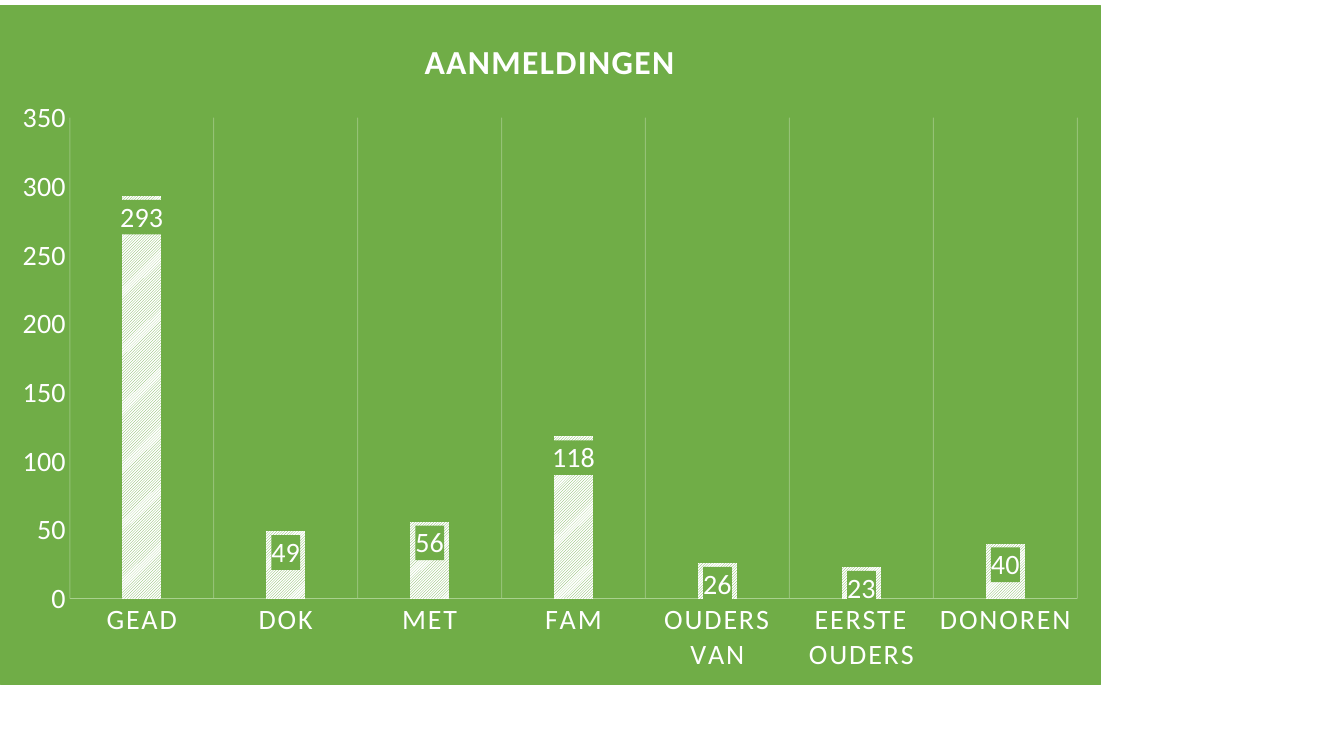
from lxml.etree import SubElement
from pptx import Presentation
from pptx.chart.data import CategoryChartData
from pptx.dml.color import RGBColor
from pptx.enum.chart import XL_CHART_TYPE, XL_LABEL_POSITION, XL_TICK_MARK
from pptx.enum.dml import MSO_PATTERN
from pptx.oxml import parse_xml
from pptx.oxml.ns import nsdecls, qn
from pptx.util import Inches, Pt

GREEN = RGBColor(0x70, 0xAD, 0x47)
LIGHT_GREEN = RGBColor(0xA9, 0xD1, 0x8E)
WHITE = RGBColor(0xFF, 0xFF, 0xFF)
FONT = "Calibri"

REGISTRATIONS = {
    "GEAD": 293, "DOK": 49, "MET": 56, "FAM": 118,
    "OUDERS VAN": 26, "EERSTE OUDERS": 23, "DONOREN": 40,
}


def style_font(font, size=20, bold=False):
    font.name, font.size, font.bold = FONT, Pt(size), bold
    font.color.rgb = WHITE


def green_background(border=""):
    return parse_xml(
        f'<c:spPr {nsdecls("c", "a")}><a:solidFill><a:srgbClr val="{GREEN}"/>'
        f"</a:solidFill>{border}</c:spPr>")


def manual_layout(**settings):
    children = "".join(f'<c:{key} val="{value}"/>' for key, value in settings.items())
    return parse_xml(
        f'<c:layout {nsdecls("c")}><c:manualLayout>{children}</c:manualLayout></c:layout>')


def add_registrations_chart(slide):
    data = CategoryChartData()
    data.categories = list(REGISTRATIONS)
    data.add_series("Series 1", list(REGISTRATIONS.values()))
    chart = slide.shapes.add_chart(
        XL_CHART_TYPE.COLUMN_CLUSTERED,
        Inches(0), Inches(0.05), Inches(10.92), Inches(6.75), data).chart
    chart.has_legend = False
    style_font(chart.font)
    border = (f'<a:ln w="9525"><a:solidFill><a:srgbClr val="{GREEN}"/>'
              "</a:solidFill></a:ln>")
    chart.element.find(qn("c:chart")).addnext(green_background(border))
    return chart


def style_title(chart):
    title = chart.chart_title
    title.text_frame.text = "AANMELDINGEN"
    run = title.text_frame.paragraphs[0].runs[0]
    style_font(run.font, 24, bold=True)
    run.font.element.set("spc", "100") if hasattr(run.font, "element") else None
    for properties in chart.element.xpath("c:chart/c:title//a:rPr"):
        properties.set("spc", "100")
    title.include_in_layout = False
    for layout in chart.element.xpath("c:chart/c:title/c:layout"):
        layout.getparent().remove(layout)
    chart.element.xpath("c:chart/c:title/c:tx")[0].addnext(
        manual_layout(xMode="edge", yMode="edge", x=0.38, y=0.04))


def style_axes(chart):
    categories, values = chart.category_axis, chart.value_axis
    for axis in (categories, values):
        axis.major_tick_mark = axis.minor_tick_mark = XL_TICK_MARK.NONE
        style_font(axis.tick_labels.font)

    # Category axis with faint separators
    categories.format.line.color.rgb = LIGHT_GREEN
    categories.format.line.width = Pt(0.25)
    categories.has_major_gridlines = True
    separators = categories.major_gridlines.format.line
    separators.color.rgb = WHITE
    separators.width = Pt(0.75)
    for color in chart.element.xpath(".//c:catAx/c:majorGridlines//a:srgbClr"):
        SubElement(color, qn("a:alpha")).set("val", "25000")
    for properties in chart.element.xpath(".//c:catAx/c:txPr//a:defRPr"):
        properties.set("spc", "120")

    # Value axis
    values.has_major_gridlines = False
    values.format.line.fill.background()
    values.minimum_scale, values.maximum_scale, values.major_unit = 0, 350, 50


def style_columns(chart):
    plot = chart.plots[0]
    plot.gap_width, plot.overlap, plot.vary_by_categories = 269, -20, False
    columns = plot.series[0]
    columns.invert_if_negative = False
    hatch = columns.format.fill
    hatch.patterned()
    hatch.pattern = MSO_PATTERN.LIGHT_UPWARD_DIAGONAL
    hatch.fore_color.rgb, hatch.back_color.rgb = GREEN, WHITE

    # Value labels on a green ground
    labels = columns.data_labels
    labels.show_value = True
    labels.position = XL_LABEL_POSITION.INSIDE_END
    style_font(labels.font)
    chart.element.xpath(".//c:ser/c:dLbls/c:txPr")[0].addprevious(green_background())


def place_plot(chart):
    plot_area = chart.element.xpath("c:chart/c:plotArea")[0]
    for layout in plot_area.findall(qn("c:layout")):
        plot_area.remove(layout)
    plot_area.insert(0, manual_layout(
        layoutTarget="inner", xMode="edge", yMode="edge",
        x=0.063, y=0.165, w=0.916, h=0.708))


def main():
    presentation = Presentation()
    presentation.slide_width, presentation.slide_height = Inches(13.33), Inches(7.5)
    slide = presentation.slides.add_slide(presentation.slide_layouts[6])
    chart = add_registrations_chart(slide)
    style_title(chart)
    style_axes(chart)
    style_columns(chart)
    place_plot(chart)
    presentation.save("out.pptx")


if __name__ == "__main__":
    main()
